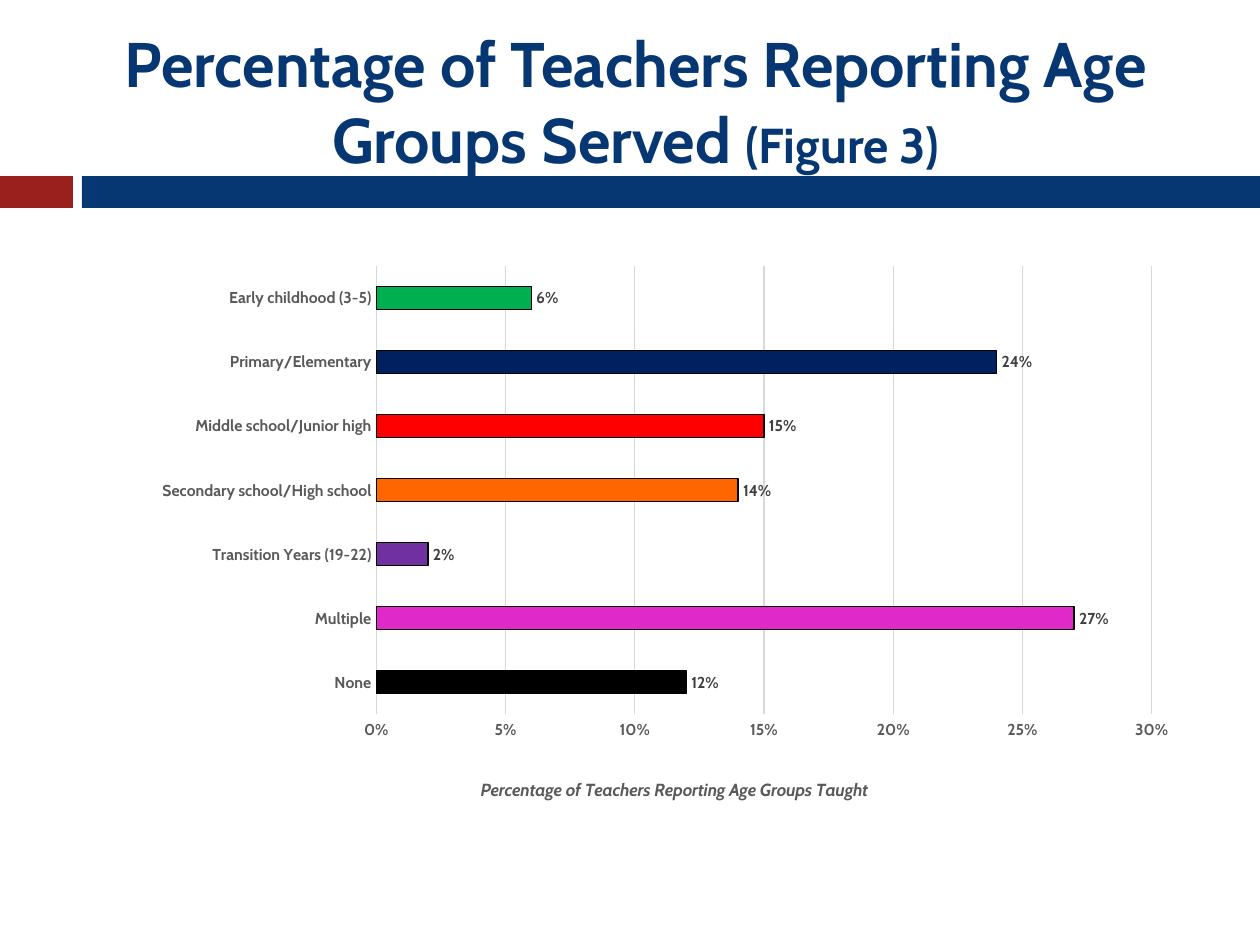
import pptx
import pptx.util
import pptx.chart.data
import pptx.dml.color
import pptx.enum.chart
import pptx.enum.shapes
import pptx.enum.text
import pptx.oxml
import pptx.oxml.ns

# Content
TITLE = [("Percentage of Teachers Reporting Age Groups Served ", 36), ("(Figure 3)", 28)]
AXIS_TITLE = "Percentage of Teachers Reporting Age Groups Taught"
AGE_GROUPS = [  # bottom to top: label, share, colour
    ("None", 0.12, "black"),
    ("Multiple", 0.27, "magenta"),
    ("Transition Years (19-22)", 0.02, "purple"),
    ("Secondary school/High school", 0.14, "orange"),
    ("Middle school/Junior high", 0.15, "red"),
    ("Primary/Elementary", 0.24, "navy"),
    ("Early childhood (3-5)", 0.06, "green"),
]
COLORS = {
    "title": "063772", "accent": "99201C", "grid": "D9D9D9", "axis": "595959",
    "label": "404040", "black": "000000", "magenta": "DF29C9", "purple": "7030A0",
    "orange": "FF6600", "red": "FF0000", "navy": "002060", "green": "00B050",
}
FONT = "Cabin"
PX = 914400 // 126
WIDTH, HEIGHT = 1260, 945
BAND_TOP, BAND_H = 176, 32
BANDS = [(0, 73, "accent"), (82, WIDTH - 82, "title")]


def box(*px):
    return [pptx.util.Emu(v * PX) for v in px]


def rgb(name):
    return pptx.dml.color.RGBColor.from_string(COLORS[name])


def style(font, size, color, italic=None):
    font.name = FONT
    font.size = pptx.util.Pt(size)
    font.bold = True
    font.italic = italic
    font.color.rgb = rgb(color)


def outline(line, color):
    line.color.rgb = rgb(color)
    line.width = pptx.util.Pt(0.75)


def place(parent, index, **values):
    """Give a chart part a manual layout, as fractions of the chart."""
    for old in parent.findall(pptx.oxml.ns.qn("c:layout")):
        parent.remove(old)
    target = '<c:layoutTarget val="inner"/>' if "w" in values else ""
    modes = "".join(f'<c:{k}Mode val="edge"/>' for k in "xy")
    sizes = "".join(f'<c:{k} val="{v}"/>' for k, v in values.items())
    parent.insert(index, pptx.oxml.parse_xml(
        f'<c:layout {pptx.oxml.ns.nsdecls("c")}><c:manualLayout>'
        f'{target}{modes}{sizes}</c:manualLayout></c:layout>'))


prs = pptx.Presentation()
prs.slide_width, prs.slide_height = box(WIDTH, HEIGHT)
s = prs.slides.add_slide(prs.slide_layouts[5])

# Colour bands
for left, width, color in BANDS:
    sp = s.shapes.add_shape(pptx.enum.shapes.MSO_SHAPE.RECTANGLE,
                            *box(left, BAND_TOP, width, BAND_H))
    sp.shadow.inherit = False
    sp.fill.solid()
    sp.fill.fore_color.rgb = rgb(color)
    sp.line.fill.background()

# Title
title = s.shapes.title
title.left, title.top, title.width, title.height = box(63, 32, 1145, 136)
tf = title.text_frame
tf.word_wrap = True
tf.auto_size = pptx.enum.text.MSO_AUTO_SIZE.NONE
tf.vertical_anchor = pptx.enum.text.MSO_ANCHOR.MIDDLE
p = tf.paragraphs[0]
p.alignment = pptx.enum.text.PP_ALIGN.CENTER
for text, size in TITLE:
    r = p.add_run()
    r.text = text
    style(r.font, size, "title")

# Bar chart
data = pptx.chart.data.CategoryChartData(number_format="0%")
data.categories = [label for label, _, _ in AGE_GROUPS]
data.add_series("Series 1", [share for _, share, _ in AGE_GROUPS])
chart = s.shapes.add_chart(pptx.enum.chart.XL_CHART_TYPE.BAR_CLUSTERED,
                           *box(84, 242, 1124, 598), data).chart
chart.has_legend = False
chart.has_title = False
chart.font.name = FONT
chart.font.size = pptx.util.Pt(10)
plot = chart.plots[0]
plot.gap_width = 182
plot.vary_by_categories = False

# Bars and their labels
series = plot.series[0]
series.format.fill.solid()
series.format.fill.fore_color.rgb = rgb("navy")
outline(series.format.line, "black")
for i, (_, _, color) in enumerate(AGE_GROUPS):
    bar = series.points[i].format
    bar.fill.solid()
    bar.fill.fore_color.rgb = rgb(color)
    outline(bar.line, "black")
plot.has_data_labels = True
labels = plot.data_labels
labels.show_value = True
labels.number_format = "0%"
labels.number_format_is_linked = False
labels.position = pptx.enum.chart.XL_LABEL_POSITION.OUTSIDE_END
style(labels.font, 9, "label")

# Axes
cat, val = chart.category_axis, chart.value_axis
for axis in (cat, val):
    axis.major_tick_mark = axis.minor_tick_mark = pptx.enum.chart.XL_TICK_MARK.NONE
    style(axis.tick_labels.font, 9, "axis")
outline(cat.format.line, "grid")
val.format.line.fill.background()
val.minimum_scale, val.maximum_scale, val.major_unit = 0, 0.3, 0.05
val.tick_labels.number_format = "0%"
val.tick_labels.number_format_is_linked = False
val.has_major_gridlines = True
outline(val.major_gridlines.format.line, "grid")
r = val.axis_title.text_frame.paragraphs[0].add_run()
r.text = AXIS_TITLE
style(r.font, 10, "axis", italic=True)

# Positions inside the chart
place(val.axis_title._element, 1, x=0.35, y=0.89)
place(chart._chartSpace.chart.plotArea, 0, x=0.26, y=0.04, w=0.69, h=0.75)

prs.save("out.pptx")
